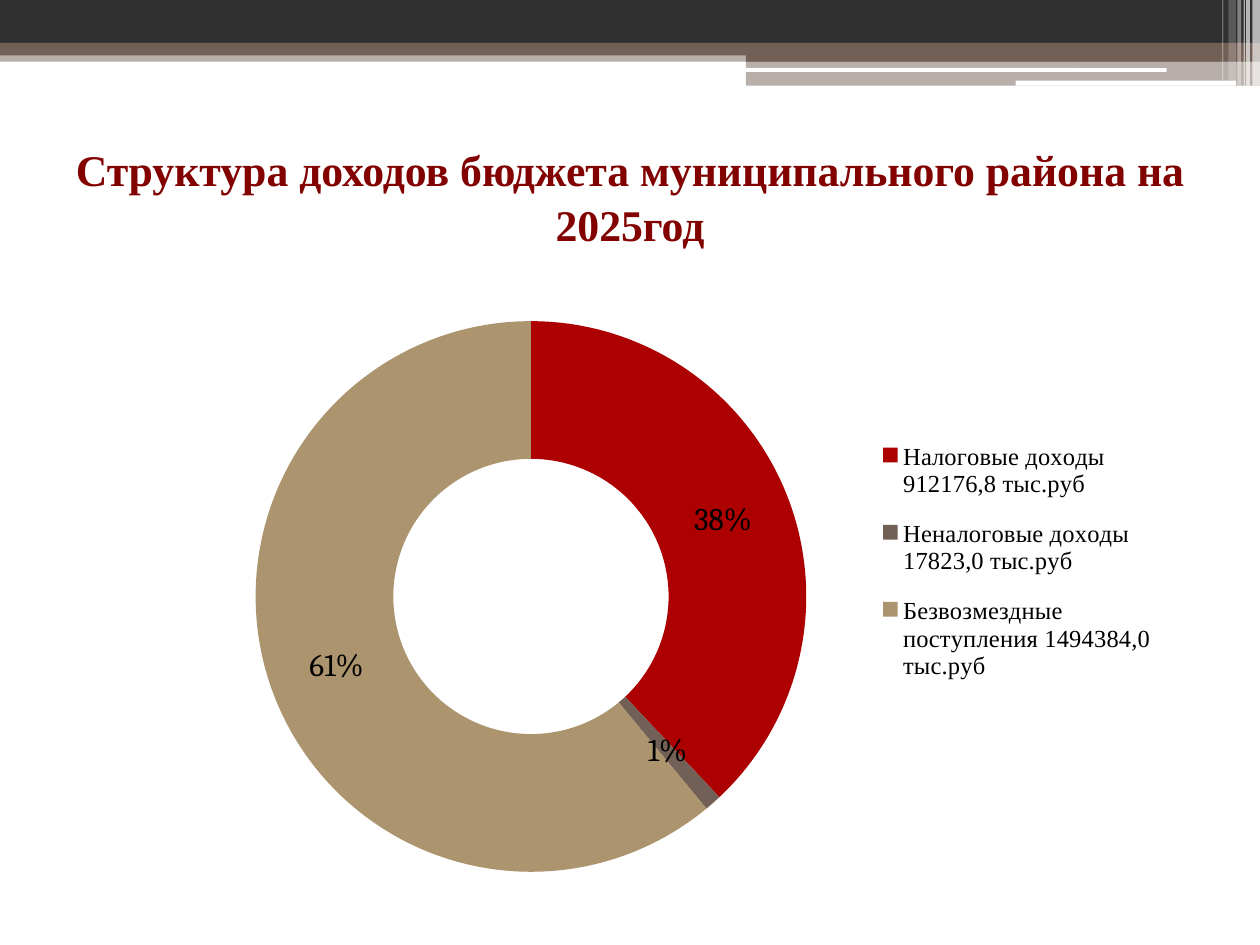
from lxml import etree
from pptx import Presentation
from pptx.chart.data import CategoryChartData
from pptx.dml.color import RGBColor
from pptx.enum.chart import XL_CHART_TYPE, XL_LEGEND_POSITION
from pptx.enum.shapes import MSO_SHAPE
from pptx.enum.text import MSO_ANCHOR, PP_ALIGN
from pptx.oxml.ns import qn
from pptx.util import Inches, Pt

RECTANGLE = MSO_SHAPE.RECTANGLE
ROUNDED = MSO_SHAPE.ROUNDED_RECTANGLE
DOUGHNUT = XL_CHART_TYPE.DOUGHNUT
LEGEND_RIGHT = XL_LEGEND_POSITION.RIGHT
CENTER = PP_ALIGN.CENTER
MIDDLE = MSO_ANCHOR.MIDDLE

WHITE = RGBColor(0xFF, 0xFF, 0xFF)
BLACK = RGBColor(0x00, 0x00, 0x00)
CHARCOAL = RGBColor(0x30, 0x30, 0x30)
BROWN = RGBColor(0x72, 0x60, 0x56)
RED = RGBColor(0xAD, 0x01, 0x01)
SAND = RGBColor(0xAC, 0x95, 0x6E)
MAROON = RGBColor(0x82, 0x01, 0x01)

TITLE = "Структура доходов бюджета муниципального района на 2025год"
INCOME = [
    ("Налоговые доходы 912176,8 тыс.руб", 38, RED),
    ("Неналоговые доходы 17823,0 тыс.руб", 1, BROWN),
    ("Безвозмездные поступления 1494384,0 тыс.руб", 61, SAND),
]
BANDS = [
    (0, 0.4, 10, 0.09, BROWN, 50),
    (0, 0, 10, 0.34, CHARCOAL, 100),
    (0, 0.34, 10, 0.1, BROWN, 100),
    (5.92, 0.39, 4.08, 0.1, BROWN, 100),
    (5.92, 0.48, 4.08, 0.2, BROWN, 50),
]
HIGHLIGHTS = [(5.91, 0.54, 3.35, 0.03), (8.06, 0.64, 1.75, 0.04)]
STRIPES = [
    (9.94, 0.06, 0.68, 65),
    (9.89, 0.03, 0.68, 65),
    (9.87, 0.01, 0.68, 60),
    (9.82, 0.03, 0.68, 40),
    (9.75, 0.06, 0.64, 20),
    (9.7, 0.01, 0.64, 30),
]


def place(box, left, top, width, height):
    box.left, box.top = Inches(left), Inches(top)
    box.width, box.height = Inches(width), Inches(height)


def format_font(font, name, size, color, bold=False):
    font.name = name
    font.size = Pt(size)
    font.color.rgb = color
    font.bold = bold


def write_text(box, text, *, name, size, color, bold=False, align=CENTER, spacing=1.0):
    box.text_frame.word_wrap = True
    box.text_frame.vertical_anchor = MIDDLE
    para = box.text_frame.paragraphs[0]
    para.alignment = align
    para.line_spacing = spacing
    span = para.add_run()
    span.text = text
    format_font(span.font, name, size, color, bold)


def add_bar(page, left, top, width, height, color, opacity=100, kind=RECTANGLE):
    bar = page.shapes.add_shape(
        kind, Inches(left), Inches(top), Inches(width), Inches(height))
    bar.shadow.inherit = False
    bar.fill.solid()
    bar.fill.fore_color.rgb = color
    bar.line.fill.background()
    if opacity < 100:
        tint = bar.fill._xPr.find(qn("a:solidFill"))[0]
        etree.SubElement(tint, qn("a:alpha"), val=str(opacity * 1000))
    return bar


def add_header(page):
    for band in BANDS:
        add_bar(page, *band)
    for highlight in HIGHLIGHTS:
        add_bar(page, *highlight, WHITE, kind=ROUNDED)
    for left, width, height, opacity in STRIPES:
        add_bar(page, left, 0, width, height, WHITE, opacity)


def set_layout(parent, index, inner=False, **fractions):
    for old in parent.findall(qn("c:layout")):
        parent.remove(old)
    layout = etree.Element(qn("c:layout"))
    manual = etree.SubElement(layout, qn("c:manualLayout"))
    if inner:
        etree.SubElement(manual, qn("c:layoutTarget"), val="inner")
    for mode in ("xMode", "yMode"):
        etree.SubElement(manual, qn(f"c:{mode}"), val="edge")
    for key, value in fractions.items():
        etree.SubElement(manual, qn(f"c:{key}"), val=str(value))
    parent.insert(index, layout)


def add_income_chart(page):
    names, shares, colors = zip(*INCOME)
    data = CategoryChartData()
    data.categories = names
    data.add_series("Series 1", shares)
    chart = page.shapes.add_chart(
        DOUGHNUT, Inches(1.46), Inches(2.41), Inches(7.87), Inches(4.65), data).chart
    format_font(chart.font, "Cambria", 18, BLACK)
    chart.has_title = False

    plot = chart.plots[0]
    for index, color in enumerate(colors):
        fill = plot.series[0].points[index].format.fill
        fill.solid()
        fill.fore_color.rgb = color

    plot.has_data_labels = True
    labels = plot.data_labels
    labels.show_value = False
    labels.show_percentage = True
    labels.number_format = "0%"
    labels.number_format_is_linked = False
    format_font(labels.font, "Cambria", 18, BLACK)

    chart.has_legend = True
    legend = chart.legend
    legend.position = LEGEND_RIGHT
    legend.include_in_layout = False
    format_font(legend.font, "Times New Roman", 14, BLACK)

    plot_area = chart._chartSpace.chart.plotArea
    set_layout(plot_area, 0, inner=True, x=0.07, y=0.03, w=0.56, h=0.94)
    set_layout(legend._element, 1, x=0.69, y=0.2, w=0.3, h=0.48)


def main():
    deck = Presentation()
    deck.slide_width, deck.slide_height = Inches(10), Inches(7.5)
    page = deck.slides.add_slide(deck.slide_layouts[5])
    add_header(page)
    add_income_chart(page)
    title = page.shapes.title
    place(title, 0.5, 0.77, 9, 1.56)
    write_text(title, TITLE, name="Times New Roman", size=25,
               color=MAROON, bold=True, spacing=1.05)
    deck.save("out.pptx")


if __name__ == "__main__":
    main()
